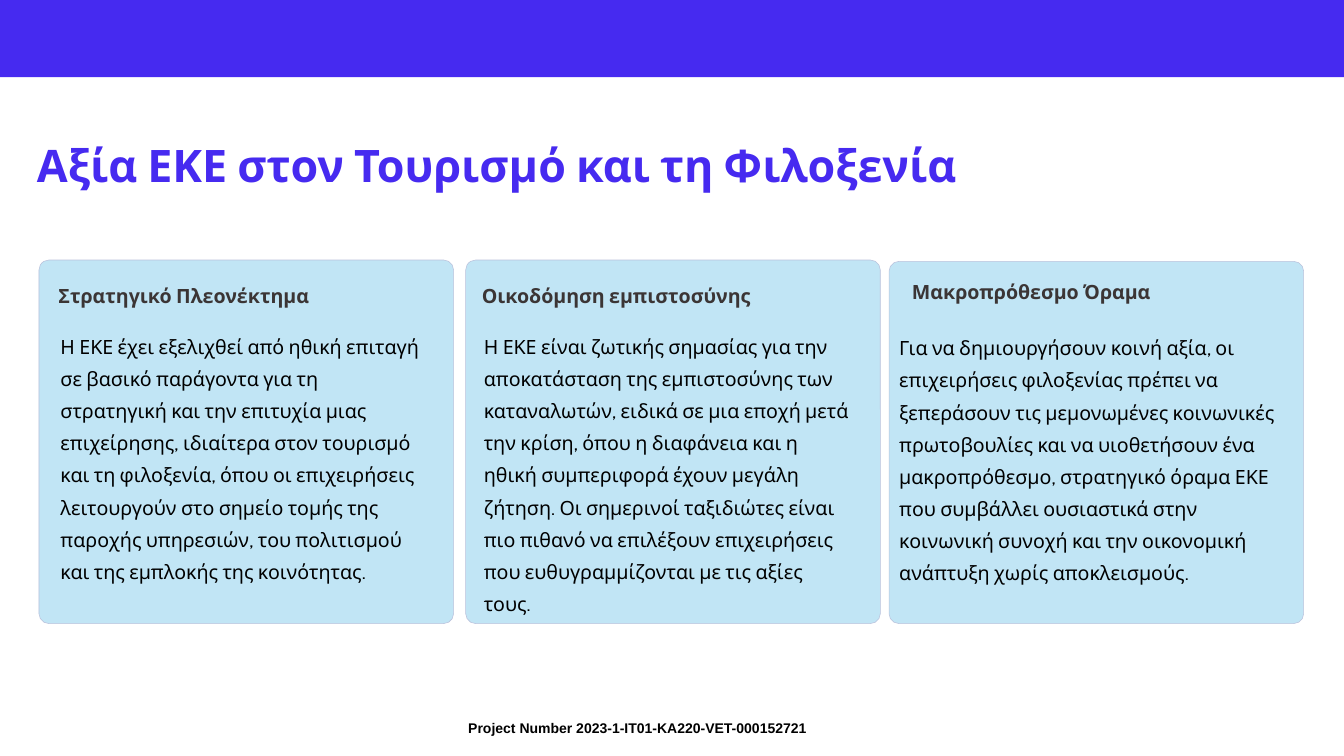
from pptx import Presentation
from pptx.dml.color import RGBColor
from pptx.enum.shapes import MSO_SHAPE
from pptx.enum.text import MSO_ANCHOR
from pptx.util import Pt

RECTANGLE = MSO_SHAPE.RECTANGLE
ROUNDED = MSO_SHAPE.ROUNDED_RECTANGLE
TOP, MIDDLE = MSO_ANCHOR.TOP, MSO_ANCHOR.MIDDLE

COLORS = {
    "violet": "462AF0",
    "card": "C1E5F5",
    "border": "BBC2DC",
    "heading": "3B3535",
    "text": "000000",
}

HEADING_SIZE = (296, 36)

CARDS = [
    ((41.8, 278.6, 444.2, 389.5), (20.9, 15.1), (23, 70.6, 394.6, 243.4),
     "Στρατηγικό Πλεονέκτημα",
     "Η ΕΚΕ έχει εξελιχθεί από ηθική επιταγή σε βασικό παράγοντα για τη "
     "στρατηγική και την επιτυχία μιας επιχείρησης, ιδιαίτερα στον τουρισμό "
     "και τη φιλοξενία, όπου οι επιχειρήσεις λειτουργούν στο σημείο τομής της "
     "παροχής υπηρεσιών, του πολιτισμού και της εμπλοκής της κοινότητας."),
    ((499, 278.6, 444.2, 389.5), (17.3, 15.1), (19.4, 70.6, 394.6, 243.4),
     "Οικοδόμηση εμπιστοσύνης",
     "Η ΕΚΕ είναι ζωτικής σημασίας για την αποκατάσταση της εμπιστοσύνης των "
     "καταναλωτών, ειδικά σε μια εποχή μετά την κρίση, όπου η διαφάνεια και η "
     "ηθική συμπεριφορά έχουν μεγάλη ζήτηση. Οι σημερινοί ταξιδιώτες είναι πιο "
     "πιθανό να επιλέξουν επιχειρήσεις που ευθυγραμμίζονται με τις αξίες τους."),
    ((952.6, 280.1, 444.2, 388), (24.5, 9.4), (10.8, 70.6, 406, 104.4),
     "Μακροπρόθεσμο Όραμα",
     "Για να δημιουργήσουν κοινή αξία, οι επιχειρήσεις φιλοξενίας πρέπει να "
     "ξεπεράσουν τις μεμονωμένες κοινωνικές πρωτοβουλίες και να υιοθετήσουν ένα "
     "μακροπρόθεσμο, στρατηγικό όραμα ΕΚΕ που συμβάλλει ουσιαστικά στην "
     "κοινωνική συνοχή και την οικονομική ανάπτυξη χωρίς αποκλεισμούς."),
]


def add_text(slide, text, box, size=21, font="Cabin", color="text", bold=False,
             wrap=True, spacing=None, anchor=TOP, insets=(0, 0)):
    """Add a text box with one formatted paragraph."""
    frame = slide.shapes.add_textbox(*map(Pt, box)).text_frame
    frame.word_wrap = wrap
    frame.vertical_anchor = anchor
    frame.margin_left = frame.margin_right = Pt(insets[0])
    frame.margin_top = frame.margin_bottom = Pt(insets[1])
    paragraph = frame.paragraphs[0]
    paragraph.line_spacing = spacing
    run = paragraph.add_run()
    run.text = text
    run.font.name = font
    run.font.size = Pt(size)
    run.font.bold = bold
    run.font.color.rgb = RGBColor.from_string(COLORS[color])


def add_panel(slide, kind, box, fill, line=None):
    """Add a filled shape with an optional thin border."""
    shape = slide.shapes.add_shape(kind, *map(Pt, box))
    shape.shadow.inherit = False
    shape.fill.solid()
    shape.fill.fore_color.rgb = RGBColor.from_string(COLORS[fill])
    if line:
        shape.line.color.rgb = RGBColor.from_string(COLORS[line])
        shape.line.width = Pt(0.6)
    else:
        shape.line.fill.background()
    return shape


def add_header(slide, box):
    """Add the top band and the title below it."""
    left, top = box[:2]
    add_panel(slide, RECTANGLE, box, "violet")
    add_text(slide, "Αξία ΕΚΕ στον Τουρισμό και τη Φιλοξενία",
             (left + 32.4, top + 103.7, 1242, 156.2), size=48, color="violet",
             bold=True, spacing=0.9, anchor=MIDDLE, insets=(7.2, 3.6))


def add_card(slide, box, heading_offset, body_box, heading, body):
    """Add a rounded card with its heading and body text."""
    left, top = box[:2]
    card = add_panel(slide, ROUNDED, box, "card", "border")
    card.adjustments[0] = 0.027
    heading_x, heading_y = heading_offset
    add_text(slide, heading, (left + heading_x, top + heading_y, *HEADING_SIZE),
             color="heading", bold=True, spacing=Pt(35.2))
    body_x, body_y, body_width, body_height = body_box
    add_text(slide, body, (left + body_x, top + body_y, body_width, body_height),
             spacing=Pt(34.5))


def add_footer(slide, box):
    """Add the project number line."""
    add_text(slide, "Project Number 2023-1-IT01-KA220-VET-000152721", box,
             size=15, font="Arial", bold=True, wrap=False, insets=(7.2, 3.6))


def main():
    """Build and save the slide."""
    presentation = Presentation()
    presentation.slide_width = Pt(1440)
    presentation.slide_height = Pt(810)
    slide = presentation.slides.add_slide(presentation.slide_layouts[6])
    add_header(slide, (0, -1.44, 1440, 84.24))
    for card in CARDS:
        add_card(slide, *card)
    add_footer(slide, (494.6, 767, 382.3, 25.2))
    presentation.save("out.pptx")


if __name__ == "__main__":
    main()
